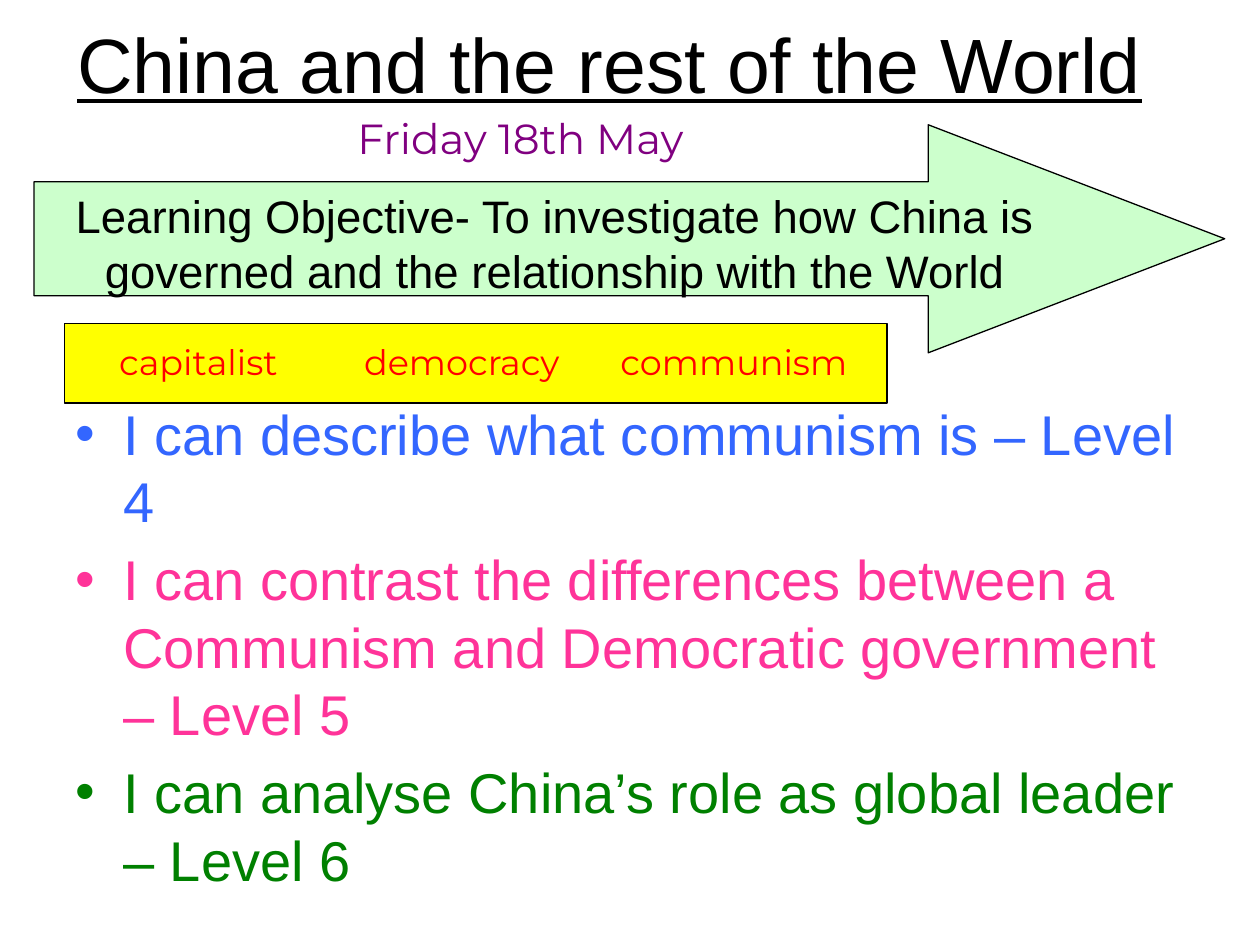
from lxml.etree import SubElement
from pptx import Presentation
from pptx.dml.color import RGBColor
from pptx.enum.shapes import MSO_SHAPE as Shape
from pptx.enum.text import MSO_ANCHOR as Anchor, PP_ALIGN as Align
from pptx.oxml.ns import qn
from pptx.util import Inches, Pt

BLACK = RGBColor(0x00, 0x00, 0x00)
MINT = RGBColor(0xCC, 0xFF, 0xCC)
YELLOW = RGBColor(0xFF, 0xFF, 0x00)
RED = RGBColor(0xFF, 0x00, 0x00)
PURPLE = RGBColor(0x80, 0x00, 0x80)
BLUE = RGBColor(0x33, 0x66, 0xFF)
PINK = RGBColor(0xFF, 0x33, 0x99)
GREEN = RGBColor(0x00, 0x80, 0x00)

# Content
TITLE = "China and the rest of the World"
DATE = "Friday 18th May"
OBJECTIVE = ("Learning Objective- To investigate how China is governed "
             "and the relationship with the World")
KEYWORDS = [("capitalist", 0.67, 1.81), ("democracy", 2.64, 2.05),
            ("communism", 4.87, 1.91)]  # word, left, width
OUTCOMES = [
    ("I can describe what communism is – Level 4", BLUE),
    ("I can contrast the differences between a Communism and "
     "Democratic government – Level 5", PINK),
    ("I can analyse China’s role as global leader – Level 6", GREEN),
]
HANGING = Inches(0.38)

deck = Presentation()
deck.slide_width, deck.slide_height = Inches(10), Inches(7.5)
page = deck.slides.add_slide(deck.slide_layouts[6])


def add_span(para, text, size, color, font="Arial"):
    span = para.add_run()
    span.text = text
    span.font.name, span.font.size = font, Pt(size)
    span.font.color.rgb = color
    return span


def add_box(left, top, width, height, wrap=True):
    box = page.shapes.add_textbox(*map(Inches, (left, top, width, height)))
    box.text_frame.word_wrap = wrap
    return box.text_frame


def add_label(text, left, top, width, height, size, color):
    frame = add_box(left, top, width, height, wrap=False)
    frame.margin_left = frame.margin_right = 0
    para = frame.paragraphs[0]
    para.alignment = Align.CENTER
    add_span(para, text, size, color, "Montserrat")


def add_panel(kind, left, top, width, height, fill):
    panel = page.shapes.add_shape(kind, *map(Inches, (left, top, width, height)))
    panel.shadow.inherit = False
    panel.fill.solid()
    panel.fill.fore_color.rgb = fill
    panel.line.color.rgb = BLACK
    panel.line.width = Pt(0.75)
    return panel


def add_bullet(para):
    props = para._p.get_or_add_pPr()
    props.set("marL", str(HANGING))
    props.set("indent", str(-HANGING))
    SubElement(props, qn("a:buFont"), typeface="Arial")
    SubElement(props, qn("a:buChar"), char="•")


# Title, centred slightly left of the box's middle
frame = add_box(0.51, 0, 9, 0.99)
frame.vertical_anchor = Anchor.MIDDLE
frame.margin_left, frame.margin_right = 0, Inches(0.34)
para = frame.paragraphs[0]
para.alignment = Align.CENTER
add_span(para, TITLE, 44, BLACK).font.underline = True

# Learning outcomes
frame = add_box(0.5, 3.12, 9.07, 4.38)
for index, (text, color) in enumerate(OUTCOMES):
    para = frame.add_paragraph() if index else frame.paragraphs[0]
    para.space_before = Pt(6.4)
    add_bullet(para)
    add_span(para, text, 32, color)

# Objective arrow
arrow = add_panel(Shape.RIGHT_ARROW, 0.27, 0.99, 9.45, 1.81, MINT)
arrow.adjustments[0], arrow.adjustments[1] = 0.5, 1.3
arrow.text_frame.word_wrap = True
arrow.text_frame.vertical_anchor = Anchor.TOP
para = arrow.text_frame.paragraphs[0]
para.alignment = Align.CENTER
add_span(para, OBJECTIVE, 26, BLACK)

# Keyword band and date
add_panel(Shape.RECTANGLE, 0.51, 2.57, 6.53, 0.63, YELLOW)
for word, left, width in KEYWORDS:
    add_label(word, left, 2.65, width, 0.47, 20, RED)
add_label(DATE, 2.32, 0.84, 3.62, 0.55, 24, PURPLE)

deck.save("out.pptx")
